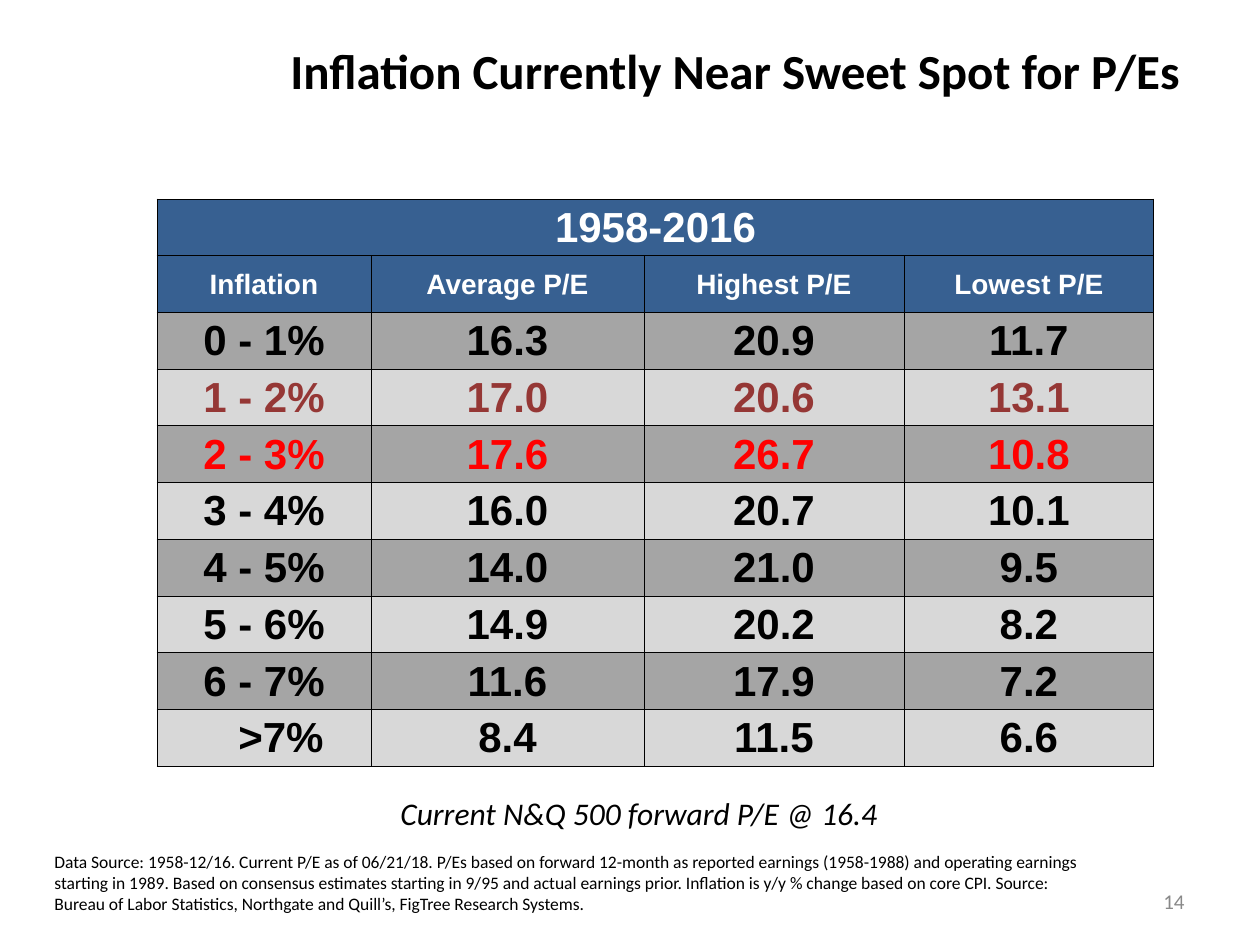
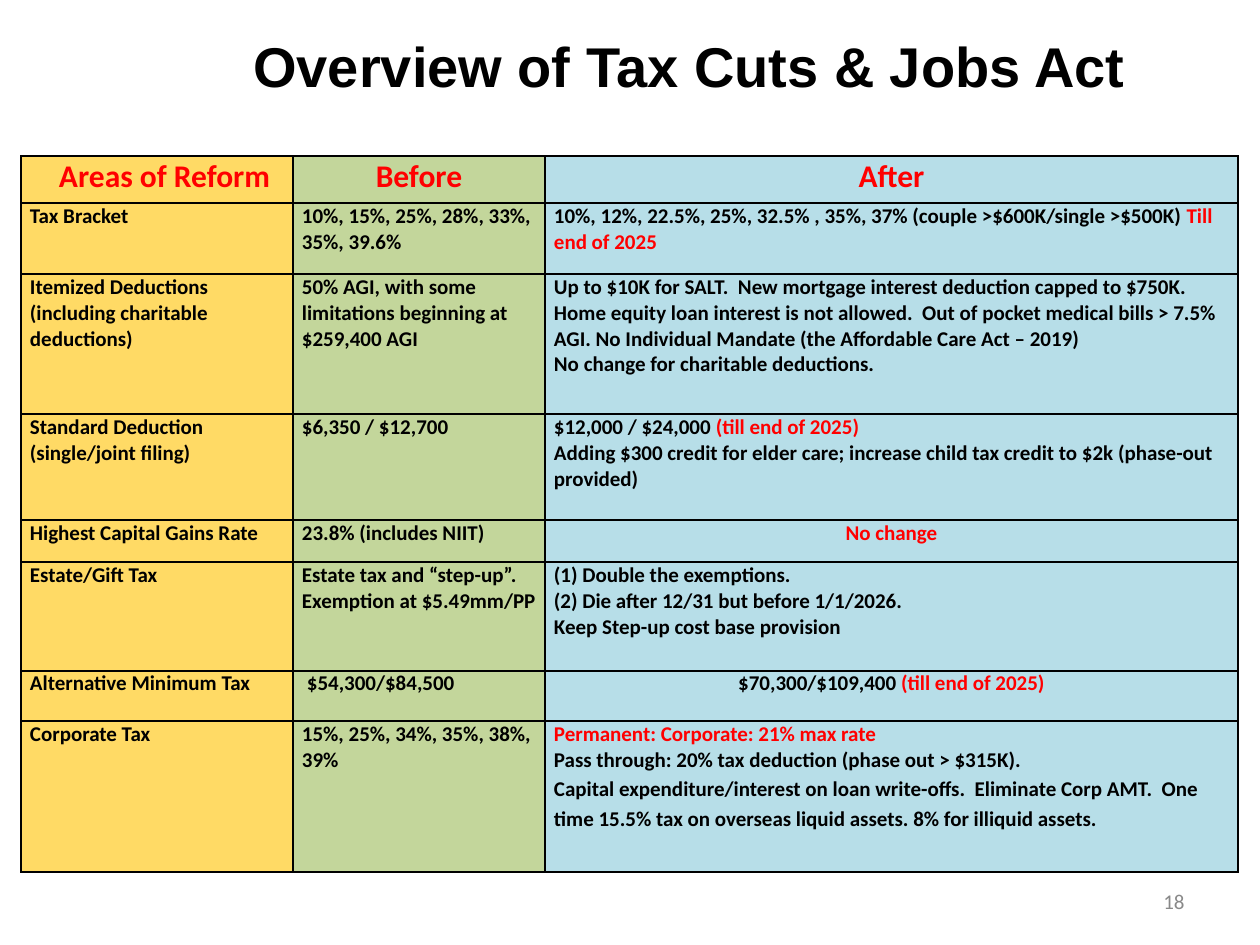
from lxml.etree import SubElement
from pptx import Presentation
from pptx.dml.color import RGBColor
from pptx.enum.text import MSO_ANCHOR, PP_ALIGN
from pptx.oxml.ns import qn
from pptx.util import Emu, Pt

EMU_PER_PX = 914400 / 126
BLACK, WHITE, RED, MAROON = "000000", "FFFFFF", "FF0000", "953735"
BLUE, DARK_GRAY, LIGHT_GRAY, NUMBER_GRAY = "376091", "A5A5A5", "D8D8D8", "898989"
REFORM_FILLS = ["FFDA65", "C3D69B", "B7DEE8"]

TITLE = {"bold": True}
CELL = {"bold": True}
INFLATION_MARGINS = {"margin_left": 1, "margin_right": 1, "margin_top": 1, "margin_bottom": 0}
REFORM_MARGINS = {"margin_left": 9, "margin_right": 9, "margin_top": 1, "margin_bottom": 0}

PE_ROWS = [
    ["1958-2016", "", "", ""],
    ["Inflation", "Average P/E", "Highest P/E", "Lowest P/E"],
    ["0 - 1%", "16.3", "20.9", "11.7"],
    ["1 - 2%", "17.0", "20.6", "13.1"],
    ["2 - 3%", "17.6", "26.7", "10.8"],
    ["3 - 4%", "16.0", "20.7", "10.1"],
    ["4 - 5%", "14.0", "21.0", "9.5"],
    ["5 - 6%", "14.9", "20.2", "8.2"],
    ["6 - 7%", "11.6", "17.9", "7.2"],
    [">7%", "8.4", "11.5", "6.6"],
]

REFORM_ROWS = [
    ["Areas of Reform", "Before", "After"],
    ["Tax Bracket", "10%, 15%, 25%, 28%, 33%, 35%, 39.6%",
     "10%, 12%, 22.5%, 25%, 32.5% , 35%, 37% (couple >$600K/single >$500K) |Till end of 2025"],
    ["Itemized Deductions (including charitable deductions)",
     "50% AGI, with some limitations beginning at $259,400 AGI",
     "Up to $10K for SALT.  New mortgage interest deduction capped to $750K. "
     "Home equity loan interest is not allowed.  Out of pocket medical bills > 7.5% AGI. "
     "No Individual Mandate (the Affordable Care Act – 2019)\n"
     "No change for charitable deductions."],
    ["Standard Deduction (single/joint filing)", "$6,350 / $12,700",
     "$12,000 / $24,000 |(till end of 2025)\n"
     "Adding $300 credit for elder care; increase child tax credit to $2k (phase-out provided)"],
    ["Highest Capital Gains Rate", "23.8% (includes NIIT)", "|No change"],
    ["Estate/Gift Tax", "Estate tax and “step-up”. Exemption at $5.49mm/PP",
     "(1) Double the exemptions.\n(2) Die after 12/31 but before 1/1/2026.\n"
     "Keep Step-up cost base provision"],
    ["Alternative Minimum Tax", "$54,300/$84,500", "$70,300/$109,400 |(till end of 2025)"],
    ["Corporate Tax", "15%, 25%, 34%, 35%, 38%, 39%",
     "|Permanent: Corporate: 21% max rate\n"
     "Pass through: 20% tax deduction (phase out > $315K).\n"
     "Capital expenditure/interest on loan write-offs.  Eliminate Corp AMT.  "
     "One time 15.5% tax on overseas liquid assets. 8% for illiquid assets."],
]


def px(n):
    return Emu(round(n * EMU_PER_PX))


def rgb(color):
    return RGBColor.from_string(color)


def apply(obj, values):
    for name, value in values.items():
        setattr(obj, name, value)


def write(tf, text, size, font="Calibri", color=BLACK, align=PP_ALIGN.LEFT, spacing=None, **style):
    tf.word_wrap = True
    for i, line in enumerate(text.split("\n")):
        p = tf.paragraphs[0] if i == 0 else tf.add_paragraph()
        apply(p, {"alignment": align, "line_spacing": spacing})
        plain, _, marked = line.partition("|")
        for part, part_color in ((plain, color), (marked, RED)):
            if part:
                r = p.add_run()
                r.text = part
                apply(r.font, {"size": Pt(size), "name": font, **style})
                r.font.color.rgb = rgb(part_color)


def add_title(s, text, box, size, font):
    sp = s.shapes.title
    apply(sp, dict(zip(("left", "top", "width", "height"), map(px, box))))
    sp.text_frame.vertical_anchor = MSO_ANCHOR.MIDDLE
    write(sp.text_frame, text, size, font, align=PP_ALIGN.CENTER, **TITLE)


def add_text(s, text, box, size, anchor=MSO_ANCHOR.MIDDLE, **style):
    tf = s.shapes.add_textbox(*map(px, box)).text_frame
    tf.vertical_anchor = anchor
    write(tf, text, size, **style)


def add_page_number(s, number):
    add_text(s, number, (903, 876, 294, 50), 12, color=NUMBER_GRAY, align=PP_ALIGN.RIGHT)


def add_grid(s, rows, box, widths):
    shape = s.shapes.add_table(len(rows), len(widths), *map(px, box))
    table = shape.table
    apply(table, {"first_row": False, "horz_banding": False})
    for column, width in zip(table.columns, widths):
        column.width = px(width)
    return table


def format_cell(cell, fill, line_width, margins, anchor):
    tcPr = cell._tc.get_or_add_tcPr()
    for side in ("lnL", "lnR", "lnT", "lnB"):
        ln = SubElement(tcPr, qn(f"a:{side}"), w=str(Pt(line_width)))
        SubElement(SubElement(ln, qn("a:solidFill")), qn("a:srgbClr"), val=BLACK)
    cell.fill.solid()
    cell.fill.fore_color.rgb = rgb(fill)
    apply(cell, {name: px(value) for name, value in margins.items()})
    cell.vertical_anchor = anchor


def add_inflation_table(s):
    table = add_grid(s, PE_ROWS, (157, 199, 997, 567), (214, 273, 260, 250))
    row_colors = {0: WHITE, 1: WHITE, 3: MAROON, 4: RED}
    for i, row in enumerate(PE_ROWS):
        fill = BLUE if i < 2 else (DARK_GRAY, LIGHT_GRAY)[i % 2]
        for j, text in enumerate(row):
            cell = table.cell(i, j)
            format_cell(cell, fill, 0.5, INFLATION_MARGINS, MSO_ANCHOR.MIDDLE)
            write(cell.text_frame, text, 16 if i == 1 else 24, "Arial",
                  row_colors.get(i, BLACK), PP_ALIGN.CENTER, **CELL)
    table.cell(0, 0).merge(table.cell(0, 3))
    table.cell(len(PE_ROWS) - 1, 0).margin_left = px(35)


def add_reform_table(s):
    heights = (47, 71, 140, 106, 42, 109, 50, 151)
    table = add_grid(s, REFORM_ROWS, (21, 156, 1217, sum(heights)), (272, 252, 693))
    centered = {(0, 1), (0, 2), (4, 2), (6, 2)}
    for i, (row, height) in enumerate(zip(REFORM_ROWS, heights)):
        table.rows[i].height = px(height)
        for j, text in enumerate(row):
            cell = table.cell(i, j)
            format_cell(cell, REFORM_FILLS[j], 1, REFORM_MARGINS, MSO_ANCHOR.TOP)
            write(cell.text_frame, text, 12 if i else 18, color=BLACK if i else RED,
                  align=PP_ALIGN.CENTER if (i, j) in centered else PP_ALIGN.LEFT,
                  spacing=Pt(14) if i == 6 else None, **CELL)
    table.cell(0, 0).margin_left = px(38)
    table.cell(6, 1).margin_left = px(14)
    table.cell(7, 2).text_frame.paragraphs[-1].line_spacing = 1.15


def add_inflation_slide(prs):
    s = prs.slides.add_slide(prs.slide_layouts[5])
    add_title(s, "Inflation Currently Near Sweet Spot for P/Es", (210, 24, 1050, 92), 28, "Calibri")
    add_inflation_table(s)
    add_text(s, "Current N&Q 500 forward P/E @ 16.4", (388, 788, 552, 50), 18,
             MSO_ANCHOR.TOP, italic=True)
    add_text(s, "Data Source: 1958-12/16. Current P/E as of 06/21/18. P/Es based on forward 12-month "
             "as reported earnings (1958-1988) and operating earnings starting in 1989. Based on "
             "consensus estimates starting in 9/95 and actual earnings prior. Inflation is y/y % "
             "change based on core CPI. Source: Bureau of Labor Statistics, Northgate and Quill’s, "
             "FigTree Research Systems.", (42, 845, 1067, 76), 10)
    add_page_number(s, "14")


def add_reform_slide(prs):
    s = prs.slides.add_slide(prs.slide_layouts[5])
    add_title(s, "Overview of Tax Cuts & Jobs Act", (159, 26, 1061, 78), 32, "Arial")
    add_reform_table(s)
    add_page_number(s, "18")


def main():
    prs = Presentation()
    apply(prs, {"slide_width": px(1260), "slide_height": px(945)})
    add_inflation_slide(prs)
    add_reform_slide(prs)
    prs.save("out.pptx")


if __name__ == "__main__":
    main()
